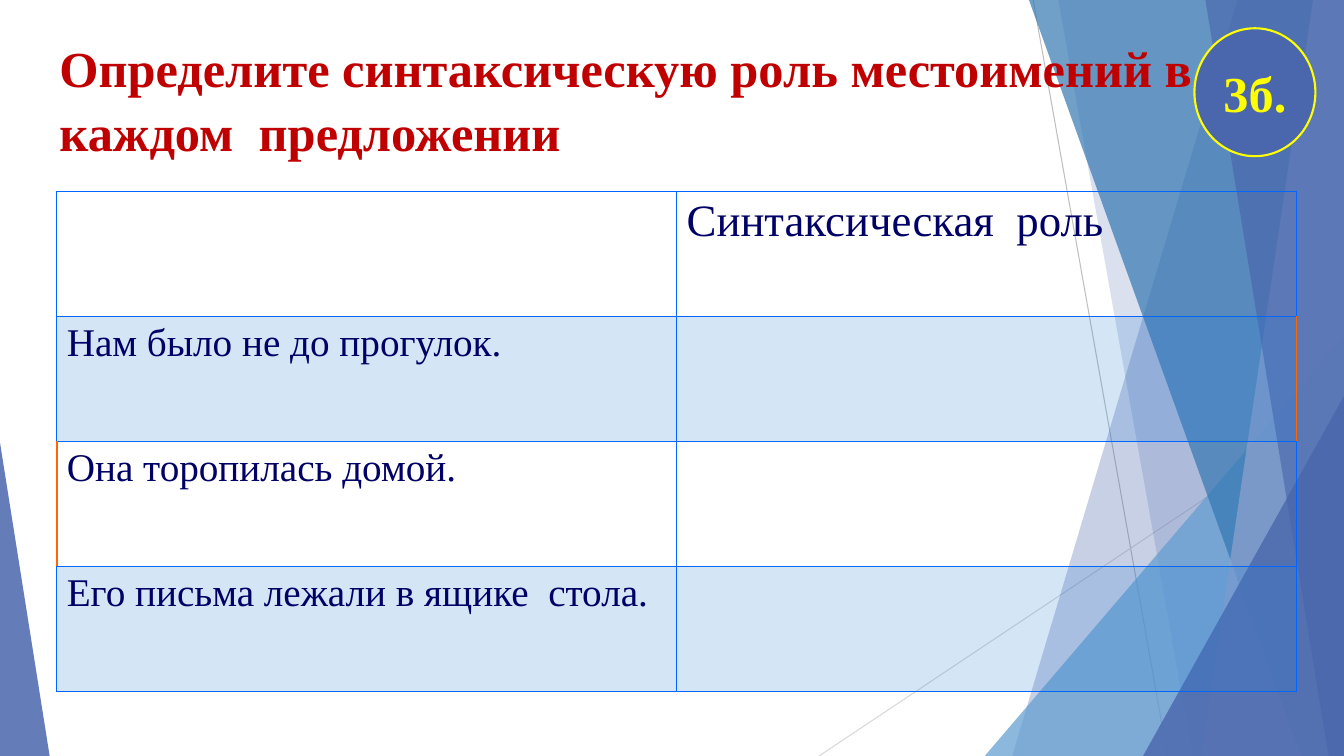
from lxml.etree import SubElement as Sub
from pptx import Presentation
from pptx.dml.color import RGBColor
from pptx.enum.shapes import MSO_CONNECTOR as Link, MSO_SHAPE as Kind
from pptx.enum.text import MSO_ANCHOR as Anchor, MSO_AUTO_SIZE as Auto, PP_ALIGN as Align
from pptx.oxml.ns import qn
from pptx.util import Pt

WIDE, HIGH = 960, 540
FONT = "Times New Roman"
NAVY = RGBColor(0x4A, 0x66, 0xAC)
PALE = RGBColor(0x90, 0xA2, 0xCF)
SKY = RGBColor(0x62, 0x9D, 0xD1)
STEEL = RGBColor(0x34, 0x77, 0xB2)
BAND = RGBColor(0x29, 0x7F, 0xD5)
RED = RGBColor(0xC0, 0x00, 0x00)
INK = RGBColor(0x00, 0x00, 0x66)
GOLD = RGBColor(0xFF, 0xFF, 0x00)
EDGE = RGBColor(0x00, 0x66, 0xFF)
FLAME = RGBColor(0xFF, 0x66, 0x00)
GREY = RGBColor(0xBF, 0xBF, 0xBF)
LIGHT = RGBColor(0xD9, 0xD9, 0xD9)


class Deck:
    """Holds the style and the current slide."""

    def __init__(self):
        self.prs = Presentation()
        self.prs.slide_width, self.prs.slide_height = Pt(WIDE), Pt(HIGH)
        self.slide = self.prs.slides.add_slide(self.prs.slide_layouts[5])
        self.shapes = self.slide.shapes

    def fade(self, node, alpha):
        tint = node.find(qn("a:solidFill")).find(qn("a:srgbClr"))
        Sub(tint, qn("a:alpha")).set("val", str(alpha * 1000))

    def paint(self, shape, color, alpha=100):
        shape.shadow.inherit = False
        shape.fill.solid()
        shape.fill.fore_color.rgb = color
        shape.line.fill.background()
        if alpha < 100:
            self.fade(shape.element.spPr, alpha)

    def line(self, x1, y1, x2, y2, color):
        link = self.shapes.add_connector(
            Link.STRAIGHT, Pt(x1), Pt(y1), Pt(x2), Pt(y2))
        link.line.color.rgb = color
        link.line.width = Pt(0.75)
        Sub(link.element.spPr, qn("a:effectLst"))

    def pane(self, top, base, color, alpha):
        """Full-height pane from a slanted edge to the right side."""
        form = self.shapes.build_freeform(Pt(top), 0, scale=1.0)
        rest = [(WIDE, 0), (WIDE, HIGH), (base, HIGH)]
        form.add_line_segments([(Pt(x), Pt(y)) for x, y in rest], close=True)
        self.paint(form.convert_to_shape(), color, alpha)

    def wedge(self, x, y, width, peak, color, alpha):
        """Triangle standing on the bottom edge."""
        shape = self.shapes.add_shape(
            Kind.ISOSCELES_TRIANGLE, Pt(x), Pt(y), Pt(width), Pt(HIGH - y))
        shape.adjustments[0] = peak
        self.paint(shape, color, alpha)

    def label(self, frame, text, size, color, bold=False):
        run = frame.paragraphs[0].add_run()
        run.text = text
        font = run.font
        font.name, font.size, font.bold = FONT, Pt(size), bold
        font.color.rgb = color

    def title(self, text, x, y, width, height):
        head = self.shapes.title
        head.left, head.top, head.width, head.height = map(Pt, (x, y, width, height))
        # Bring the title in front of the backdrop
        head.element.getparent().append(head.element)
        frame = head.text_frame
        frame.word_wrap, frame.auto_size = True, Auto.NONE
        frame.vertical_anchor = Anchor.TOP
        para = frame.paragraphs[0]
        para.alignment, para.line_spacing = Align.LEFT, 1.06
        self.label(frame, text, 36, RED, True)

    def border(self, tc, marks):
        props = tc.get_or_add_tcPr()
        for spot, side in enumerate("LRTB"):
            color, width = marks.get(side, (EDGE, 1))
            line = Sub(props, qn("a:ln" + side))
            line.set("w", str(Pt(width)))
            fill = Sub(line, qn("a:solidFill"))
            Sub(fill, qn("a:srgbClr")).set("val", str(color))
            props.insert(spot, line)

    def table(self, rows, x, y, width, height, marks):
        item = self.shapes.add_table(
            len(rows), len(rows[0]), Pt(x), Pt(y), Pt(width), Pt(height))
        grid = item.table
        grid.first_row = grid.horz_banding = False
        nodes = item.element.iter(qn("a:tc"))
        for r, row in enumerate(rows):
            for c, text in enumerate(row):
                cell, tc = grid.cell(r, c), next(nodes)
                if r % 2:
                    cell.fill.solid()
                    cell.fill.fore_color.rgb = BAND
                    self.fade(tc.get_or_add_tcPr(), 20)
                else:
                    cell.fill.background()
                if text:
                    self.label(cell.text_frame, text, 28 if r else 32, INK)
                self.border(tc, marks.get((r, c), {}))

    def badge(self, text, x, y, width, height):
        disc = self.shapes.add_shape(Kind.OVAL, Pt(x), Pt(y), Pt(width), Pt(height))
        self.paint(disc, NAVY)
        disc.line.color.rgb = GOLD
        disc.line.width = Pt(1.5)
        frame = disc.text_frame
        frame.vertical_anchor = Anchor.MIDDLE
        frame.paragraphs[0].alignment = Align.CENTER
        self.label(frame, text, 36, GOLD, True)


def main():
    deck = Deck()

    # Backdrop
    deck.line(738, 0, 834, HIGH, GREY)
    deck.line(WIDE, 290, 585, HIGH, LIGHT)
    deck.pane(884, 723, NAVY, 30)
    deck.pane(756, 852, NAVY, 20)
    deck.wedge(703.4, 240, 256.6, 1, SKY, 72)
    deck.pane(735, 929.5, STEEL, 70)
    deck.pane(938, 858, PALE, 70)
    deck.pane(861, 949, NAVY, 65)
    deck.wedge(816.5, 283, 143.5, 1, NAVY, 80)
    deck.wedge(0, 316, 35.5, 0, NAVY, 85)

    # Title
    deck.title("Определите синтаксическую роль местоимений в каждом  предложении",
               35.3, 20.2, 876.2, 91.4)

    # Table
    rows = [
        ("", "Синтаксическая  роль"),
        ("Нам было не до прогулок.", ""),
        ("Она торопилась домой.", ""),
        ("Его письма лежали в ящике  стола.", ""),
    ]
    marks = {(1, 1): {"R": (FLAME, 1.5)}, (2, 0): {"L": (FLAME, 1.5)}}
    deck.table(rows, 40.5, 137, 885.6, 357.2, marks)

    # Score badge
    deck.badge("3б.", 853.2, 20.2, 86.4, 91.4)

    deck.prs.save("out.pptx")


if __name__ == "__main__":
    main()
